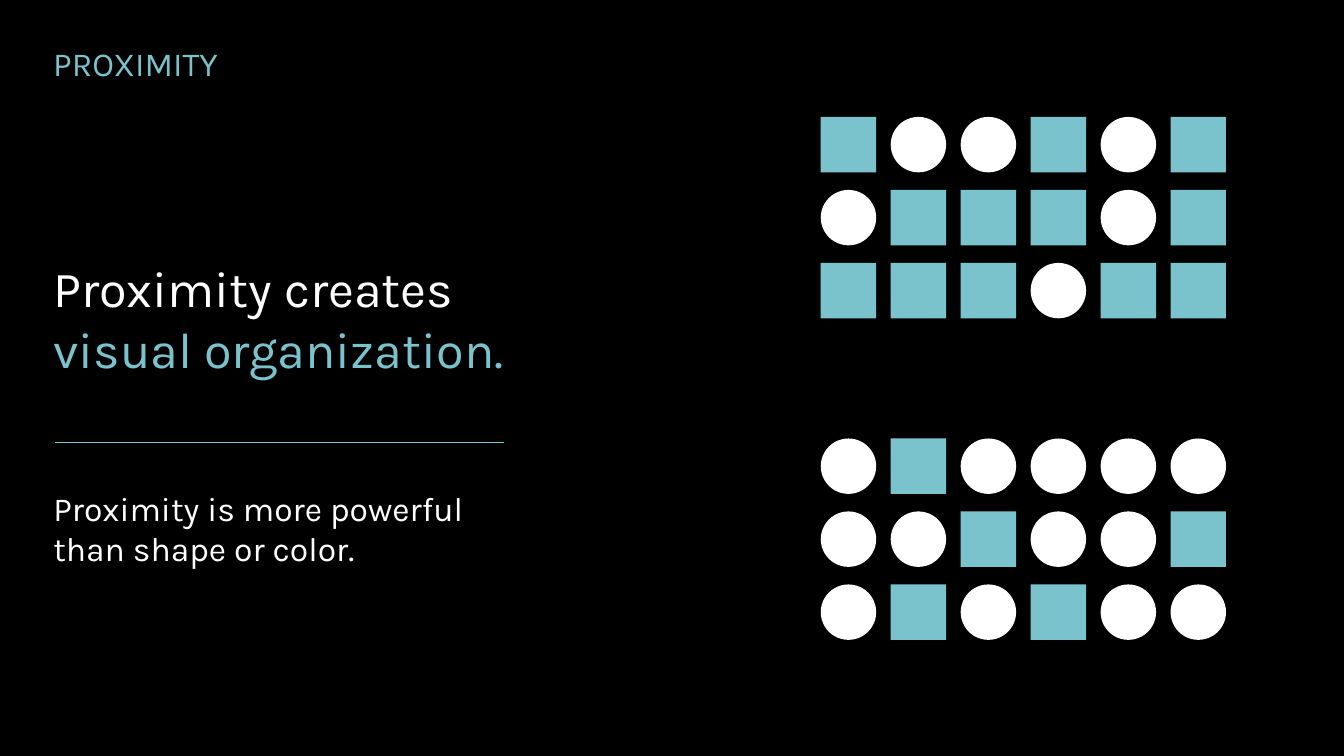
from dataclasses import dataclass

from lxml.etree import SubElement
from pptx import Presentation
from pptx.dml.color import RGBColor
from pptx.enum.shapes import MSO_CONNECTOR, MSO_SHAPE
from pptx.enum.text import MSO_AUTO_SIZE
from pptx.oxml.ns import qn
from pptx.util import Inches, Pt


@dataclass(frozen=True)
class Theme:
    background: RGBColor = RGBColor(0x00, 0x00, 0x00)
    accent: RGBColor = RGBColor(0x7A, 0xC3, 0xCC)
    light: RGBColor = RGBColor(0xFF, 0xFF, 0xFF)
    font: str = "Karla"
    heading: int = 36
    body: int = 24
    rule: float = 0.5


THEME = Theme()
WIDTH, HEIGHT = 13.33, 7.5

# S is an accent square, O is a light circle
UPPER_GROUP = ["SOOSOS", "OSSSOS", "SSSOSS"]
LOWER_GROUP = ["OSOOOO", "OOSOOS", "OSOSOO"]
MARK = 0.55
COLUMN_STEP, ROW_STEP = 0.694, 0.724


def add_text(s, box, size, runs, wrap=True):
    """Place one paragraph; runs are (text, colour) pairs."""
    tf = s.shapes.add_textbox(*map(Inches, box)).text_frame
    tf.word_wrap = wrap
    tf.auto_size = MSO_AUTO_SIZE.SHAPE_TO_FIT_TEXT
    p = tf.paragraphs[0]
    for text, color in runs:
        r = p.add_run()
        r.text = text
        r.font.name = THEME.font
        r.font.size = Pt(size)
        r.font.color.rgb = color


def add_rule(s, left, top, width):
    line = s.shapes.add_connector(
        MSO_CONNECTOR.STRAIGHT,
        Inches(left), Inches(top), Inches(left + width), Inches(top))
    line.line.color.rgb = THEME.accent
    line.line.width = Pt(THEME.rule)
    SubElement(line._element.spPr, qn("a:effectLst"))


def add_message(s, box):
    """Topic, heading, rule and explanation, stacked in the box."""
    left, top, width, height = box
    add_text(s, (left, top, 2.07, 0.5), THEME.body,
             [("PROXIMITY", THEME.accent)], wrap=False)
    add_text(s, (left, top + 0.4 * height, width, 1.31), THEME.heading,
             [("Proximity creates ", THEME.light),
              ("visual organization.", THEME.accent)])
    add_rule(s, left + 0.12, top + 0.755 * height, 4.45)
    add_text(s, (left, top + 0.83 * height, 0.81 * width, 0.91), THEME.body,
             [("Proximity is more powerful than shape or color.", THEME.light)])


def add_marks(s, left, top, rows):
    marks = {"S": (MSO_SHAPE.RECTANGLE, THEME.accent),
             "O": (MSO_SHAPE.OVAL, THEME.light)}
    for i, row in enumerate(rows):
        for j, key in enumerate(row):
            kind, color = marks[key]
            sp = s.shapes.add_shape(
                kind, Inches(left + j * COLUMN_STEP),
                Inches(top + i * ROW_STEP), Inches(MARK), Inches(MARK))
            sp.shadow.inherit = False
            sp.fill.solid()
            sp.fill.fore_color.rgb = color
            sp.line.fill.background()


def add_proximity_slide(prs):
    s = prs.slides.add_slide(prs.slide_layouts[6])
    s.background.fill.solid()
    s.background.fill.fore_color.rgb = THEME.background
    add_message(s, (0.43, 0.38, 5.52, 5.31))
    for top, rows in ((1.16, UPPER_GROUP), (4.35, LOWER_GROUP)):
        add_marks(s, 8.14, top, rows)


def main():
    prs = Presentation()
    prs.slide_width, prs.slide_height = Inches(WIDTH), Inches(HEIGHT)
    add_proximity_slide(prs)
    prs.save("out.pptx")


if __name__ == "__main__":
    main()
